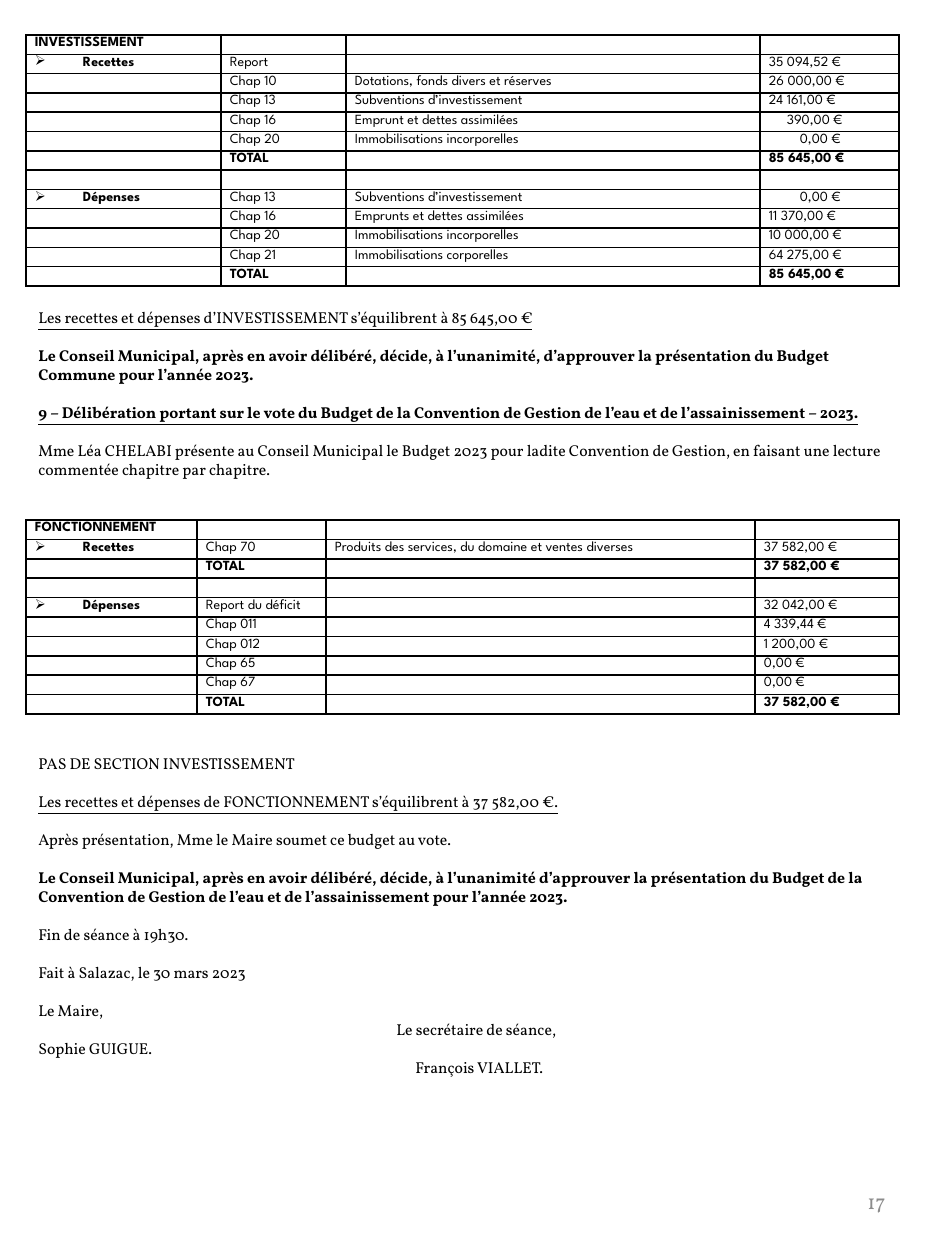
from lxml.etree import SubElement
from pptx import Presentation
from pptx.dml.color import RGBColor
from pptx.enum.text import MSO_ANCHOR, PP_ALIGN
from pptx.oxml.ns import qn
from pptx.util import Emu, Pt

BLACK = RGBColor(0, 0, 0)
GREY = RGBColor(0x8C, 0x8C, 0x8C)
TABLE_FONT, BODY_FONT = "League Spartan", "Vollkorn"
LEFT, BODY_WIDTH, LINE = 26, 883, 19
BULLET_INDENT, CELL_MARGIN = 48, 9
SHIFTS = {(4, 3): 18, (5, 3): 31, (8, 3): 31}

INVESTMENT = [
    ("INVESTISSEMENT", "", "", ""),
    ("Recettes", "Report", "", "35 094,52 €"),
    ("", "Chap 10", "Dotations, fonds divers et réserves", "26 000,00 €"),
    ("", "Chap 13", "Subventions d’investissement", "24 161,00 €"),
    ("", "Chap 16", "Emprunt et dettes assimilées", "390,00 €"),
    ("", "Chap 20", "Immobilisations incorporelles", "0,00 €"),
    ("", "TOTAL", "", "85 645,00 €"),
    ("", "", "", ""),
    ("Dépenses", "Chap 13", "Subventions d’investissement", "0,00 €"),
    ("", "Chap 16", "Emprunts et dettes assimilées", "11 370,00 €"),
    ("", "Chap 20", "Immobilisations incorporelles", "10 000,00 €"),
    ("", "Chap 21", "Immobilisations corporelles", "64 275,00 €"),
    ("", "TOTAL", "", "85 645,00 €"),
]
OPERATING = [
    ("FONCTIONNEMENT", "", "", ""),
    ("Recettes", "Chap 70", "Produits des services, du domaine et ventes diverses", "37 582,00 €"),
    ("", "TOTAL", "", "37 582,00 €"),
    ("", "", "", ""),
    ("Dépenses", "Report du déficit", "", "32 042,00 €"),
    ("", "Chap 011", "", "4 339,44 €"),
    ("", "Chap 012", "", "1 200,00 €"),
    ("", "Chap 65", "", "0,00 €"),
    ("", "Chap 67", "", "0,00 €"),
    ("", "TOTAL", "", "37 582,00 €"),
]
# (top, height, column widths, rows, left shifts of short amounts)
TABLES = [
    (35, 251, (195, 125, 414, 139), INVESTMENT, SHIFTS),
    (520, 194, (171, 129, 429, 144), OPERATING, {}),
]
# (text, style letters: b bold, u underlined, t tight to the line above; indent)
DELIBERATION = [
    ("Les recettes et dépenses d’INVESTISSEMENT s’équilibrent à 85 645,00 €", "u", 0),
    ("Le Conseil Municipal, après en avoir délibéré, décide, à l’unanimité, d’approuver la "
     "présentation du Budget Commune pour l’année 2023.", "b", 0),
    ("9 – Délibération portant sur le vote du Budget de la Convention de Gestion de l’eau et "
     "de l’assainissement – 2023.", "bu", 0),
    ("Mme Léa CHELABI présente au Conseil Municipal le Budget 2023 pour ladite Convention de "
     "Gestion, en faisant une lecture commentée chapitre par chapitre.", "", 0),
]
CLOSING = [
    ("PAS DE SECTION INVESTISSEMENT", "", 0),
    ("Les recettes et dépenses de FONCTIONNEMENT s’équilibrent à 37 582,00 €.", "u", 0),
    ("Après présentation, Mme le Maire soumet ce budget au vote.", "", 0),
    ("Le Conseil Municipal, après en avoir délibéré, décide, à l’unanimité d’approuver la "
     "présentation du Budget de la Convention de Gestion de l’eau et de l’assainissement pour "
     "l’année 2023.", "b", 0),
    ("Fin de séance à 19h30.", "", 0),
    ("Fait à Salazac, le 30 mars 2023", "", 0),
    ("Le Maire,", "", 0),
    ("Le secrétaire de séance,", "t", 358),
    ("Sophie GUIGUE.", "t", 0),
    ("François VIALLET.", "t", 377),
]
TEXTS = [(302, 184, DELIBERATION), (748, 338, CLOSING)]


def px(length):
    """Turn pixels into EMU."""
    return Emu(round(length * 914400 / 126))


def style(para, font, size, color=BLACK, bold=False, underline=False):
    """Format every run of a paragraph."""
    for span in para.runs:
        span.font.name, span.font.size = font, Pt(size)
        span.font.bold, span.font.underline = bold, underline
        span.font.color.rgb = color


def add_borders(cell):
    """Draw the four borders of a cell."""
    properties = cell._tc.get_or_add_tcPr()
    for side in ("a:lnL", "a:lnR", "a:lnT", "a:lnB"):
        line = SubElement(properties, qn(side), w=str(Pt(1)))
        fill = SubElement(line, qn("a:solidFill"))
        SubElement(fill, qn("a:srgbClr"), val=str(BLACK))


def fill_cell(cell, text, bold, bullet, shift):
    """Write and format one table cell."""
    cell.margin_left, cell.margin_right = px(CELL_MARGIN + shift), px(CELL_MARGIN)
    cell.margin_top = cell.margin_bottom = 0
    add_borders(cell)
    cell.fill.background()
    para = cell.text_frame.paragraphs[0]
    para.text = text
    para.line_spacing = 1.15
    if bullet:
        properties = para._p.get_or_add_pPr()
        properties.set("marL", str(px(BULLET_INDENT)))
        properties.set("indent", str(-px(BULLET_INDENT)))
        SubElement(properties, qn("a:buChar"), char="➢")
    if not text:
        SubElement(para._p, qn("a:endParaRPr"), sz="800")
    style(para, TABLE_FONT, 8, bold=bold)


def add_budget(page, top, height, widths, rows, shifts):
    """Add one budget table."""
    table = page.shapes.add_table(len(rows), len(widths), px(LEFT), px(top),
                                  px(sum(widths)), px(height)).table
    table.first_row = table.horz_banding = False
    for column, width in zip(table.columns, widths):
        column.width = px(width)
    for row, values in enumerate(rows):
        table.rows[row].height = px(height / len(rows))
        for column, text in enumerate(values):
            bold = column == 0 or "TOTAL" in values
            bullet = column == 0 and row > 0 and text != ""
            fill_cell(table.cell(row, column), text, bold, bullet, shifts.get((row, column), 0))


def add_text(page, top, height, lines):
    """Add one block of minutes."""
    box = page.shapes.add_textbox(px(LEFT), px(top), px(BODY_WIDTH), px(height))
    frame = box.text_frame
    frame.word_wrap = True
    for index, (text, flags, indent) in enumerate(lines):
        para = frame.add_paragraph() if index else frame.paragraphs[0]
        para.text = text
        if index and "t" not in flags:
            para.space_before = px(LINE)
        if indent:
            para._p.get_or_add_pPr().set("marL", str(px(indent)))
        style(para, BODY_FONT, 9, bold="b" in flags, underline="u" in flags)


def add_page_number(page, number):
    """Add the page number at the bottom right."""
    box = page.shapes.add_textbox(px(678), px(1168), px(220), px(67))
    frame = box.text_frame
    frame.word_wrap = True
    frame.vertical_anchor = MSO_ANCHOR.MIDDLE
    para = frame.paragraphs[0]
    para.text = number
    para.alignment = PP_ALIGN.RIGHT
    style(para, BODY_FONT, 12, GREY)


def main():
    """Build the page of minutes."""
    deck = Presentation()
    deck.slide_width, deck.slide_height = px(945), px(1260)
    page = deck.slides.add_slide(deck.slide_layouts[6])
    add_page_number(page, "17")
    for budget, text in zip(TABLES, TEXTS):
        add_budget(page, *budget)
        add_text(page, *text)
    deck.save("out.pptx")


if __name__ == "__main__":
    main()
